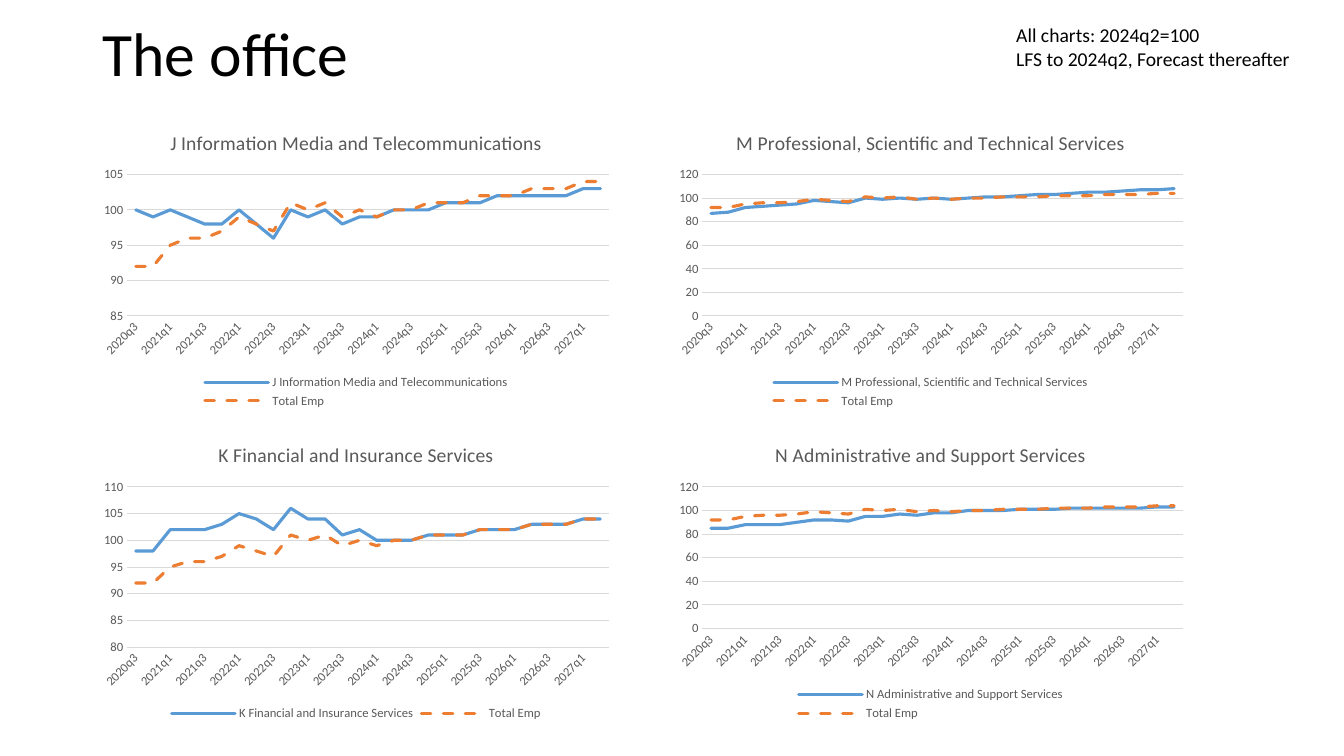
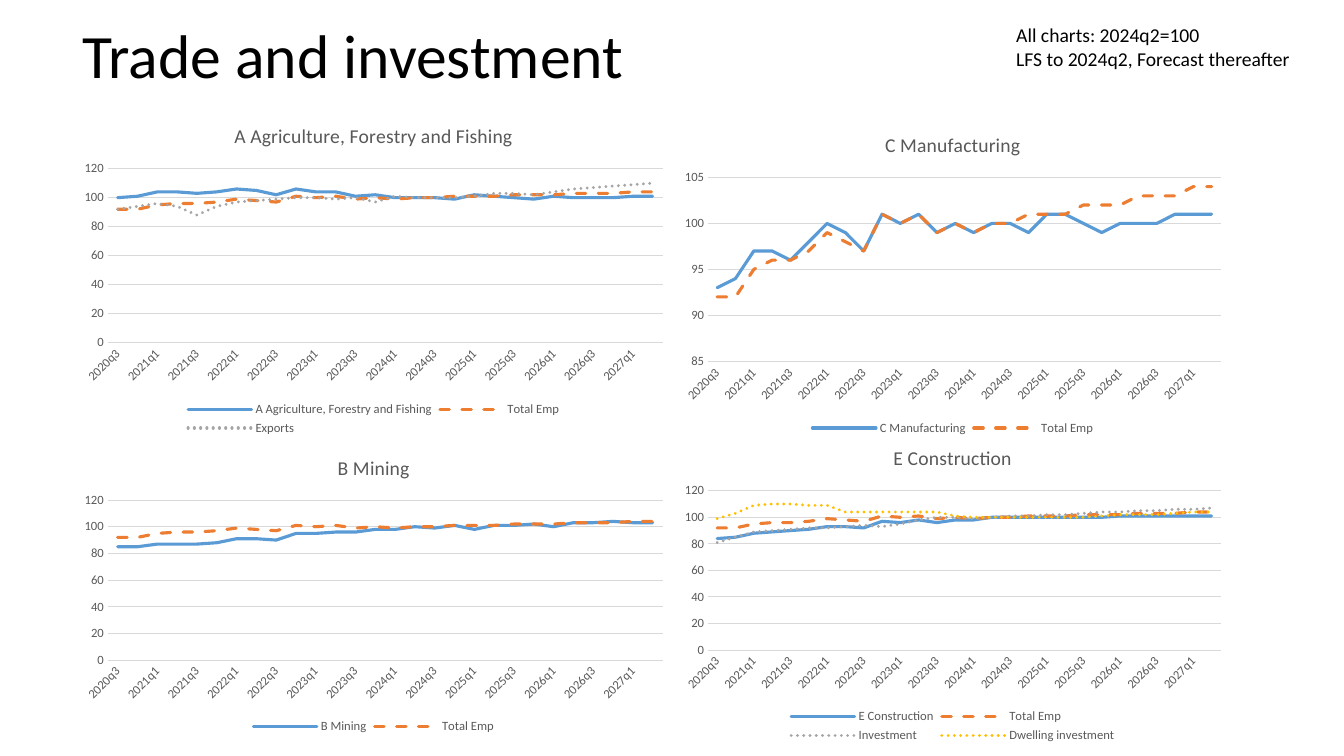
import dataclasses

import pptx
import pptx.chart.data
import pptx.dml.color
import pptx.enum.chart
import pptx.enum.dml
import pptx.enum.text
import pptx.oxml
import pptx.util

Pt = pptx.util.Pt
RGB = pptx.dml.color.RGBColor.from_string
DASH = pptx.enum.dml.MSO_LINE


@dataclasses.dataclass(frozen=True)
class Theme:
    font: str = "Calibri"
    text: str = "000000"
    muted: str = "595959"
    grid: str = "D9D9D9"
    title_size: float = 44
    note_size: float = 14
    label_size: float = 9
    chart_size: float = 10
    rule: float = 0.75
    line: float = 2.25
    # One colour and dash for each series position
    series: tuple = (
        ("5B9BD5", DASH.SOLID),
        ("ED7D31", DASH.DASH),
        ("A5A5A5", DASH.ROUND_DOT),
        ("FFC000", DASH.ROUND_DOT),
    )


@dataclasses.dataclass(frozen=True)
class Run:
    """A straight stretch of quarters that ends at a value."""
    steps: int
    end: int


def index_values(*items):
    """Join single values and straight runs, in whole index points."""
    values = []
    for item in items:
        if isinstance(item, Run):
            start = values[-1]
            slope = (item.end - start) / item.steps
            values += [round(start + slope * (i + 1)) for i in range(item.steps)]
        else:
            values.append(item)
    return values


THEME = Theme()
WIDTH, HEIGHT = pptx.util.Inches(13.33), pptx.util.Inches(7.5)
NOTE = ("All charts: 2024q2=100", "LFS to 2024q2, Forecast thereafter")
NOTE_BOX = (74.87, 2.4, 23.63, 7.6)

# Third quarter of 2020 to second quarter of 2027
QUARTERS = [f"{year}q{q}" for year in range(2020, 2028) for q in range(1, 5)][2:-2]
FORECAST = 12
TOTAL = ("Total Emp", index_values(
    92, 92, 95, 96, 96, 97, 99, 98, 97, 101, 100, 101, 99, 100, 99, 100,
    Run(FORECAST, 104)))

# Columns and rows are start and length in percent of the slide.
# Scales are minimum, maximum and step of the value axis.
WIDE_SCALE = (0, 120, 20)
CLOSE_SCALE = (85, 105, 5)
OFFICE_LEFT, OFFICE_RIGHT = (6.9, 39.2), (49.7, 39.08)
OFFICE_TOP, OFFICE_BOTTOM = (15.07, 39.47), (56.4, 39.47)
TRADE_LEFT, TRADE_RIGHT = (5.4, 44.8), (50.11, 41.56)

SLIDES = [
    {
        "title": "The office",
        "box": (6.9, 1.6, 86.27, 11.73),
        "charts": [
            (OFFICE_LEFT, OFFICE_TOP, CLOSE_SCALE,
             ("J Information Media and Telecommunications", index_values(
                 100, 99, 100, 99, 98, 98, 100, 98, 96, 100, 99, 100, 98, 99, 99,
                 100, Run(FORECAST, 103)))),
            (OFFICE_LEFT, OFFICE_BOTTOM, (80, 110, 5),
             ("K Financial and Insurance Services", index_values(
                 98, 98, 102, Run(2, 102), 103, 105, 104, 102, 106, 104, 104, 101,
                 102, 100, 100, Run(FORECAST, 104)))),
            (OFFICE_RIGHT, OFFICE_TOP, WIDE_SCALE,
             ("M Professional, Scientific and Technical Services", index_values(
                 87, 88, 92, Run(3, 95), 98, 97, 96, 100, 99, 100, 99, 100, 99,
                 100, Run(FORECAST, 108)))),
            (OFFICE_RIGHT, OFFICE_BOTTOM, WIDE_SCALE,
             ("N Administrative and Support Services", index_values(
                 85, 85, 88, Run(2, 88), Run(2, 92), 92, 91, 95, 95, 97, 96, 98,
                 98, 100, Run(FORECAST, 103)))),
        ],
    },
    {
        "title": "Trade and investment",
        "box": (5.4, 0.27, 86.27, 14.93),
        "charts": [
            (TRADE_LEFT, (14.13, 44), WIDE_SCALE,
             ("A Agriculture, Forestry and Fishing", index_values(
                 100, 101, 104, 104, 103, 104, 106, 105, 102, 106, 104, 104, 101,
                 102, 100, Run(2, 100), 99, 102, Run(3, 99), 101, 100, Run(4, 101))),
             ("Exports", index_values(
                 92, 94, 96, 94, 88, 94, 97, Run(3, 100), 100, 99, 100, 97, 101,
                 100, Run(2, 100), 101, 103, 103, 102, Run(2, 106), Run(4, 110)))),
            (TRADE_LEFT, (58.13, 39.47), WIDE_SCALE,
             ("B Mining", index_values(
                 85, 85, 87, Run(2, 87), 88, 91, 91, 90, 95, 95, 96, 96, 98, 98,
                 100, 99, 101, 98, 101, 101, 102, 100, 103, 103, 104, 103, 103))),
            (TRADE_RIGHT, (15.33, 42.8), CLOSE_SCALE,
             ("C Manufacturing", index_values(
                 93, 94, 97, 97, 96, 98, 100, 99, 97, 101, 100, 101, 99, 100, 99,
                 100, 100, 99, 101, 101, 100, 99, 100, Run(5, 101)))),
            (TRADE_RIGHT, (56.8, 42), WIDE_SCALE,
             ("E Construction", index_values(
                 84, 85, 88, Run(3, 91), 93, 93, 92, 97, 96, 98, 96, 98, 98, 100,
                 Run(FORECAST, 101))),
             ("Investment", index_values(
                 81, Run(2, 89), Run(6, 94), 93, Run(3, 100), 100, 99, 100,
                 Run(FORECAST, 107))),
             ("Dwelling investment", index_values(
                 99, 103, 109, 110, 110, 109, 109, 104, Run(5, 104), 101, 100,
                 Run(5, 100), Run(8, 104)))),
        ],
    },
]


def place(left, top, width, height):
    """Turn percentages of the slide into lengths."""
    return [round(size * share / 100) for size, share in
            ((WIDTH, left), (HEIGHT, top), (WIDTH, width), (HEIGHT, height))]


def assign(obj, **values):
    for name, value in values.items():
        setattr(obj, name, value)


def style_font(font, size, color):
    assign(font, name=THEME.font, size=Pt(size), bold=False)
    font.color.rgb = RGB(color)


def style_line(line, color, width):
    line.color.rgb = RGB(color)
    line.width = Pt(width)


def add_text(slide, box, lines, size, **paragraph_format):
    tf = slide.shapes.add_textbox(*place(*box)).text_frame
    tf.word_wrap = True
    for i, text in enumerate(lines):
        p = tf.add_paragraph() if i else tf.paragraphs[0]
        assign(p, **paragraph_format)
        r = p.add_run()
        r.text = text
        style_font(r.font, size, THEME.text)
    return tf


def style_axes(chart, scale):
    cat, val = chart.category_axis, chart.value_axis
    low, high, step = scale
    assign(val, minimum_scale=low, maximum_scale=high, major_unit=step,
           has_major_gridlines=True)
    for axis in (cat, val):
        assign(axis, major_tick_mark=pptx.enum.chart.XL_TICK_MARK.NONE,
               minor_tick_mark=pptx.enum.chart.XL_TICK_MARK.NONE)
        style_font(axis.tick_labels.font, THEME.label_size, THEME.muted)
    for line in (cat.format.line, val.major_gridlines.format.line):
        style_line(line, THEME.grid, THEME.rule)
    val.format.line.fill.background()
    # Slanted labels, one for every second quarter
    ax = cat._element
    ax.xpath("c:txPr/a:bodyPr")[0].set("rot", "-2700000")
    skip = pptx.oxml.parse_xml(
        '<c:tickLblSkip xmlns:c="http://schemas.openxmlformats.org/'
        'drawingml/2006/chart" val="2"/>')
    ax.xpath("c:noMultiLvlLbl")[0].addprevious(skip)


def add_index_chart(slide, column, row, scale, industry, *extras):
    data = pptx.chart.data.CategoryChartData()
    data.categories = QUARTERS
    for name, values in (industry, TOTAL, *extras):
        data.add_series(name, values)
    (left, width), (top, height) = column, row
    chart = slide.shapes.add_chart(
        pptx.enum.chart.XL_CHART_TYPE.LINE,
        *place(left, top, width, height), data).chart
    style_font(chart.font, THEME.chart_size, THEME.text)

    assign(chart, has_title=True, has_legend=True)
    tf = chart.chart_title.text_frame
    tf.text = industry[0]
    style_font(tf.paragraphs[0].runs[0].font, THEME.note_size, THEME.muted)
    chart.chart_title.include_in_layout = False
    assign(chart.legend, position=pptx.enum.chart.XL_LEGEND_POSITION.BOTTOM,
           include_in_layout=False)
    style_font(chart.legend.font, THEME.label_size, THEME.muted)

    style_axes(chart, scale)
    plot = chart.plots[0]
    plot.vary_by_categories = False
    for series, (color, dash) in zip(plot.series, THEME.series):
        series.smooth = False
        line = series.format.line
        style_line(line, color, THEME.line)
        line.dash_style = dash
        series._element.xpath("c:spPr/a:ln")[0].set("cap", "rnd")


def main():
    prs = pptx.Presentation()
    assign(prs, slide_width=WIDTH, slide_height=HEIGHT)
    for content in SLIDES:
        slide = prs.slides.add_slide(prs.slide_layouts[6])
        tf = add_text(slide, content["box"], [content["title"]],
                      THEME.title_size, line_spacing=0.9)
        tf.vertical_anchor = pptx.enum.text.MSO_ANCHOR.MIDDLE
        add_text(slide, NOTE_BOX, NOTE, THEME.note_size)
        for chart in content["charts"]:
            add_index_chart(slide, *chart)
    prs.save("out.pptx")


if __name__ == "__main__":
    main()
